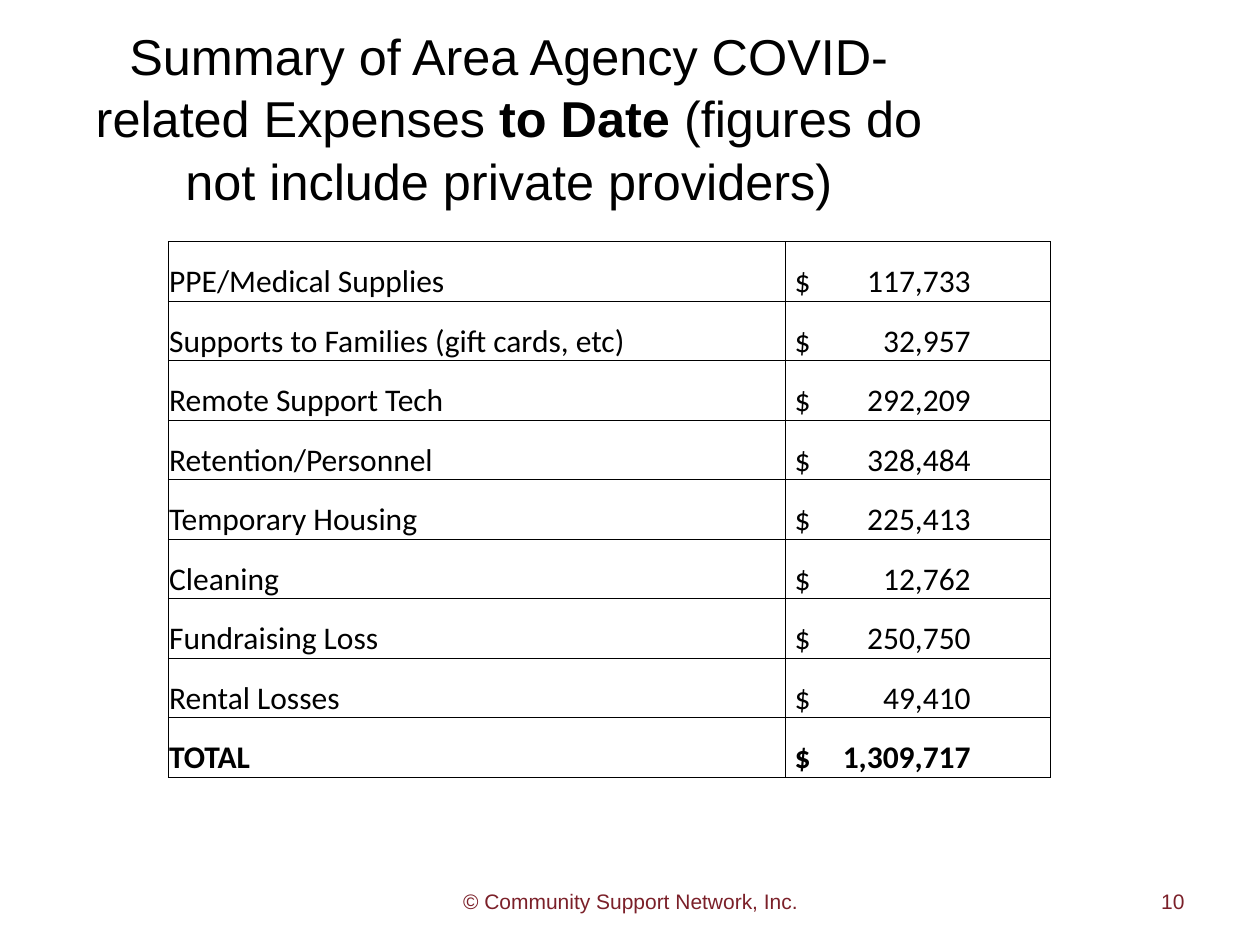
from lxml import etree
from pptx import Presentation
from pptx.dml.color import RGBColor
from pptx.enum.text import MSO_ANCHOR, PP_ALIGN
from pptx.oxml.ns import qn
from pptx.util import Cm, Pt

MIDDLE, BOTTOM = MSO_ANCHOR.MIDDLE, MSO_ANCHOR.BOTTOM
CENTER, RIGHT = PP_ALIGN.CENTER, PP_ALIGN.RIGHT
BLACK, MAROON = "000000", "7B2029"

TITLE = [
    ("Summary of Area Agency COVID-related Expenses ", False),
    ("to Date ", True),
    ("(figures do not include private providers)", False),
]
EXPENSES = [
    ("PPE/Medical Supplies", "117,733"),
    ("Supports to Families (gift cards, etc)", "32,957"),
    ("Remote Support Tech", "292,209"),
    ("Retention/Personnel", "328,484"),
    ("Temporary Housing", "225,413"),
    ("Cleaning", "12,762"),
    ("Fundraising Loss", "250,750"),
    ("Rental Losses", "49,410"),
    ("TOTAL", "1,309,717"),
]
COLUMN_WIDTHS = (Cm(12.45), Cm(5.33))
ROW_HEIGHT = Cm(1.2)


def set_font(font, name, size, color):
    font.name = name
    font.size = Pt(size)
    font.color.rgb = RGBColor.from_string(color)


def add_text(slide, left, top, width, height, runs, size, color, align):
    """Add a one-paragraph box from (text, bold) runs."""
    frame = slide.shapes.add_textbox(Cm(left), Cm(top), Cm(width), Cm(height)).text_frame
    frame.word_wrap = True
    frame.vertical_anchor = MIDDLE
    paragraph = frame.paragraphs[0]
    paragraph.alignment = align
    set_font(paragraph.font, "Arial", size, color)
    for text, bold in runs:
        run = paragraph.add_run()
        run.text = text
        run.font.bold = bold
    return paragraph


def add_borders(cell, color, width):
    properties = cell._tc.get_or_add_tcPr()
    for position, side in enumerate(("lnL", "lnR", "lnT", "lnB")):
        line = etree.Element(qn(f"a:{side}"), w=str(Pt(width)))
        fill = etree.SubElement(line, qn("a:solidFill"))
        etree.SubElement(fill, qn("a:srgbClr"), val=color)
        properties.insert(position, line)


def add_right_tab(paragraph, position):
    tabs = etree.SubElement(paragraph._p.get_or_add_pPr(), qn("a:tabLst"))
    etree.SubElement(tabs, qn("a:tab"), pos=str(position), algn="r")


def fill_cell(cell, text, bold, left_margin):
    cell.fill.background()
    add_borders(cell, BLACK, 0.5)
    cell.vertical_anchor = BOTTOM
    cell.margin_left = left_margin
    cell.margin_right = cell.margin_top = Cm(0.02)
    cell.margin_bottom = 0
    cell.text = text
    paragraph = cell.text_frame.paragraphs[0]
    if "\t" in text:
        add_right_tab(paragraph, Cm(3.55))
    set_font(paragraph.font, "Calibri", 18, BLACK)
    paragraph.font.bold = bold


def add_expense_table(slide):
    table = slide.shapes.add_table(
        len(EXPENSES), len(COLUMN_WIDTHS), Cm(3.39), Cm(4.87),
        sum(COLUMN_WIDTHS), ROW_HEIGHT * len(EXPENSES)).table
    table.first_row = table.horz_banding = False
    for column, width in zip(table.columns, COLUMN_WIDTHS):
        column.width = width
    for row, (expense, amount) in zip(table.rows, EXPENSES):
        row.height = ROW_HEIGHT
        is_total = expense == "TOTAL"
        fill_cell(row.cells[0], expense, is_total, Cm(0.02))
        fill_cell(row.cells[1], f"$\t{amount}", is_total, Cm(0.18))


def main():
    presentation = Presentation()
    presentation.slide_width, presentation.slide_height = Cm(25.4), Cm(19.05)
    slide = presentation.slides.add_slide(presentation.slide_layouts[6])
    title = add_text(slide, 1.27, 0.76, 17.98, 3.18, TITLE, 28.8, BLACK, CENTER)
    title.line_spacing = 1.04
    add_expense_table(slide)
    add_text(slide, 18.21, 17.65, 5.92, 1.02, [("10", False)], 12, MAROON, RIGHT)
    add_text(slide, 8.69, 17.65, 8.05, 1.02,
             [("© Community Support Network, Inc.", False)], 12, MAROON, CENTER)
    presentation.save("out.pptx")


if __name__ == "__main__":
    main()
